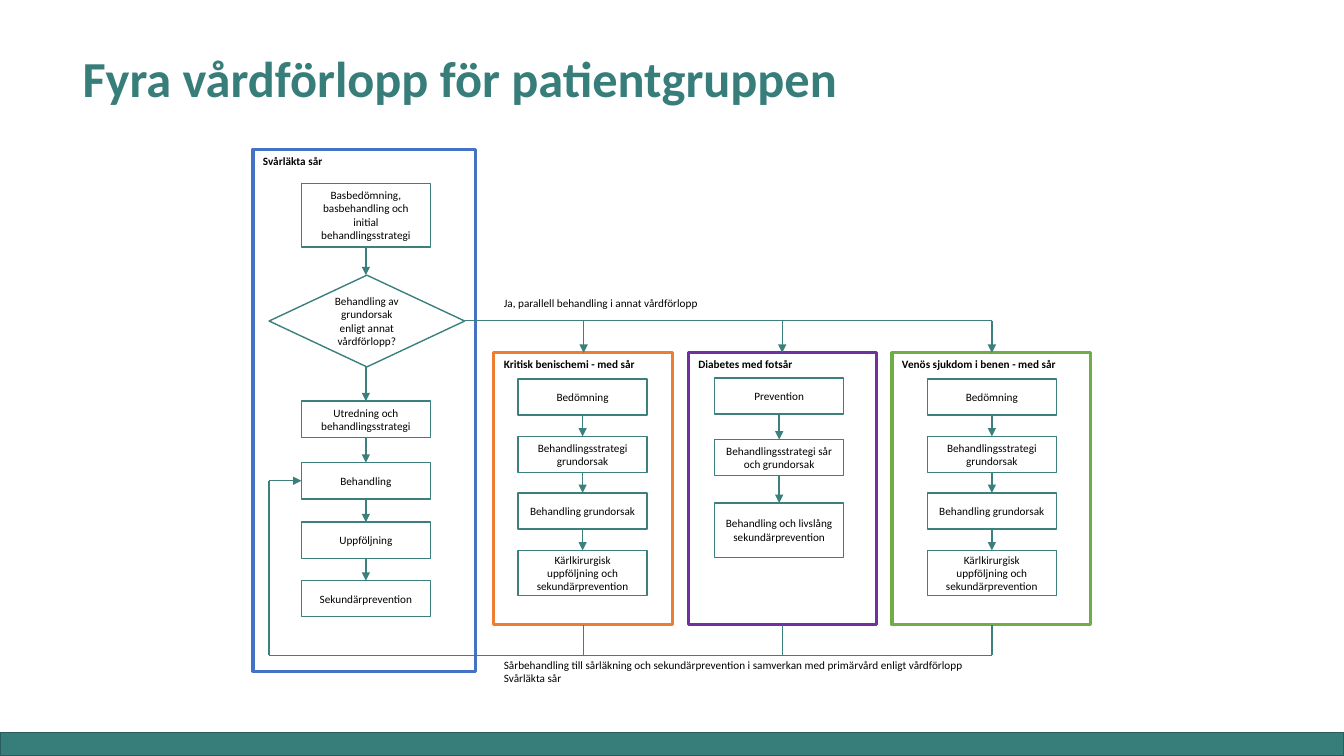
from lxml import etree
from pptx import Presentation, util as u
from pptx.dml.color import RGBColor
from pptx.enum import shapes, text
from pptx.oxml.ns import qn

# Grid: square cells of a tenth of an inch
CELL = u.Inches(0.1)
COLUMNS, ROWS = 133.33, 75
TEAL, STROKE, BLACK, WHITE = "377D7A", "3B807D", "000000", "FFFFFF"
STEP_WIDTH, STEP_HEIGHT = 12.8, 3.6
color = RGBColor.from_string

presentation = Presentation()
presentation.slide_width = int(COLUMNS * CELL)
presentation.slide_height = ROWS * CELL
slide = presentation.slides.add_slide(presentation.slide_layouts[5])


def add_box(place, words="", kind=None, fill=None, line=None, weight=1,
            bold=False, centred=False):
    """Add a shape, or a text box if no kind is given."""
    place = [int(length * CELL) for length in place]
    if kind is None:
        shape = slide.shapes.add_textbox(*place)
    else:
        shape = slide.shapes.add_shape(kind, *place)
        shape.shadow.inherit = False
        shape.line.color.rgb = color(line)
        shape.line.width = u.Pt(weight)
        if fill:
            shape.fill.solid()
            shape.fill.fore_color.rgb = color(fill)
        else:
            shape.fill.background()
    frame = shape.text_frame
    frame.word_wrap = True
    frame.vertical_anchor = text.MSO_ANCHOR.MIDDLE if centred else text.MSO_ANCHOR.TOP
    if words:
        paragraph = frame.paragraphs[0]
        paragraph.text = words
        paragraph.alignment = text.PP_ALIGN.CENTER if centred else text.PP_ALIGN.LEFT
        font_format = {"name": "Calibri", "size": u.Pt(8), "bold": bold}
        for name, value in font_format.items():
            setattr(paragraph.font, name, value)
        paragraph.font.color.rgb = color(BLACK)


def add_line(start, end, arrow=True):
    """Add a straight line between two grid points."""
    ends = [int(length * CELL) for length in (*start, *end)]
    connector = slide.shapes.add_connector(shapes.MSO_CONNECTOR.STRAIGHT, *ends)
    connector.line.color.rgb = color(STROKE)
    connector.line.width = u.Pt(1)
    if arrow:
        etree.SubElement(connector.line._get_or_add_ln(), qn("a:tailEnd"), type="triangle")
    etree.SubElement(connector._element.spPr, qn("a:effectLst"))


RECTANGLE = shapes.MSO_SHAPE.RECTANGLE
DIAMOND = shapes.MSO_SHAPE.FLOWCHART_DECISION

# Footer band
add_box((0, 72.7, COLUMNS, 2.3), kind=RECTANGLE, fill=TEAL, line="295C5A")

# Title
title = slide.shapes.title
title_place = {"left": 7.2, "top": 4.6, "width": 88.5, "height": 6.7}
for name, value in title_place.items():
    setattr(title, name, int(value * CELL))
title.text_frame.text = "Fyra vårdförlopp för patientgruppen"
title.text_frame.vertical_anchor = text.MSO_ANCHOR.BOTTOM
heading = title.text_frame.paragraphs[0]
heading.alignment = text.PP_ALIGN.LEFT
heading.line_spacing = 0.9
for name, value in {"name": "Calibri", "size": u.Pt(36), "bold": True}.items():
    setattr(heading.font, name, value)
heading.font.color.rgb = color(TEAL)

# Pathways: frame, heading, frame colour, fill, step column, steps (top, height, words)
BUS_TOP, BUS_BOTTOM, PANEL_TOP, PANEL_HEIGHT = 31.8, 65, 35, 27
vascular_steps = [
    (37.6, STEP_HEIGHT, "Bedömning"),
    (43.3, STEP_HEIGHT, "Behandlingsstrategi grundorsak"),
    (48.9, STEP_HEIGHT, "Behandling grundorsak"),
    (54.6, 4.5, "Kärlkirurgisk uppföljning och sekundärprevention"),
]
pathways = [
    ((25.1, 14.8, 22.1, 51.8), "Svårläkta sår", "4472C4", None, 29.9, [
        (18.2, 6.3, "Basbedömning, basbehandling och initial behandlingsstrategi"),
        (27.3, 9.1, "Behandling av grundorsak enligt annat vårdförlopp?"),
        (39.8, STEP_HEIGHT, "Utredning och behandlingsstrategi"),
        (45.9, STEP_HEIGHT, "Behandling"),
        (51.8, STEP_HEIGHT, "Uppföljning"),
        (57.6, STEP_HEIGHT, "Sekundärprevention"),
    ]),
    ((49, PANEL_TOP, 17.7, PANEL_HEIGHT), "Kritisk benischemi - med sår",
     "ED7D31", WHITE, 51.4, vascular_steps),
    ((68.3, PANEL_TOP, 18.7, PANEL_HEIGHT), "Diabetes med fotsår", "7030A0", None, 70.9, [
        (37.5, STEP_HEIGHT, "Prevention"),
        (43.6, STEP_HEIGHT, "Behandlingsstrategi sår och grundorsak"),
        (49.9, 5.4, "Behandling och livslång sekundärprevention"),
    ]),
    ((88.5, PANEL_TOP, 19.7, PANEL_HEIGHT), "Venös sjukdom i benen - med sår",
     "70AD47", WHITE, 92, vascular_steps),
]
for place, name, frame_color, fill, left, steps in pathways:
    add_box(place, name, RECTANGLE, fill, frame_color, weight=2.25, bold=True)
    centre = left + STEP_WIDTH / 2
    previous_bottom = None
    for top, height, words in steps:
        if words.endswith("?"):
            add_box((26.7, top, 19.4, height), words, DIAMOND, WHITE, STROKE, centred=True)
        else:
            add_box((left, top, STEP_WIDTH, height), words, RECTANGLE, WHITE, STROKE,
                    centred=True)
        if previous_bottom:
            add_line((centre, previous_bottom), (centre, top))
        previous_bottom = top + height

# Branch to the parallel pathways and return to treatment
branches = [57.9, 77.6, 98.4]
add_line((46.1, BUS_TOP), (branches[-1], BUS_TOP), arrow=False)
for branch in branches:
    add_line((branch, BUS_TOP), (branch, PANEL_TOP))
    add_line((branch, PANEL_TOP + PANEL_HEIGHT), (branch, BUS_BOTTOM), arrow=False)
add_line((branches[-1], BUS_BOTTOM), (26.7, BUS_BOTTOM), arrow=False)
add_line((26.7, BUS_BOTTOM), (26.7, 47.7), arrow=False)
add_line((26.7, 47.7), (29.9, 47.7))

# Labels on the branch and return lines
add_box((49, 28.9, 29.1, 2.4), "Ja, parallell behandling i annat vårdförlopp")
add_box((49, 64.8, 49.3, 3.7), "Sårbehandling till sårläkning och sekundärprevention i samverkan "
                               "med primärvård enligt vårdförlopp Svårläkta sår")

presentation.save("out.pptx")
